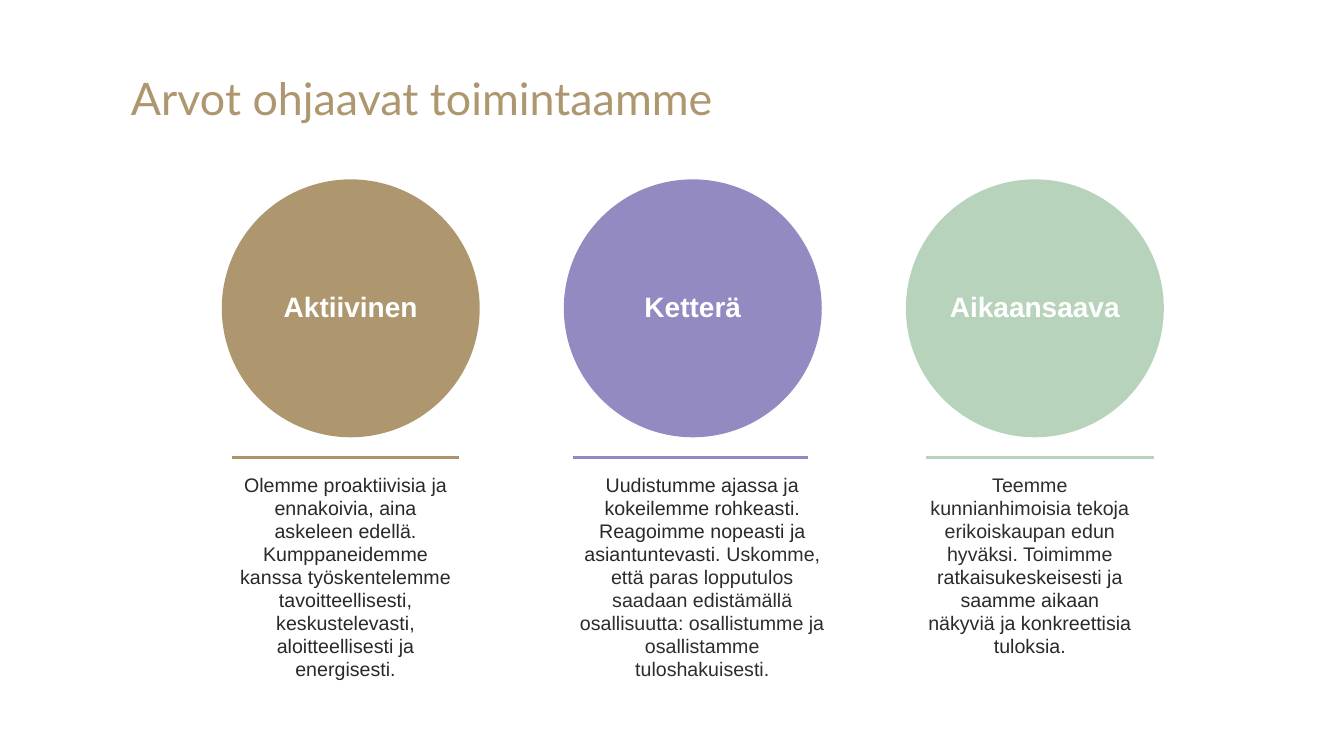
from dataclasses import dataclass

from lxml import etree
from pptx import Presentation
from pptx.dml.color import RGBColor
from pptx.enum.shapes import MSO_CONNECTOR, MSO_SHAPE
from pptx.enum.text import MSO_ANCHOR, MSO_AUTO_SIZE, PP_ALIGN
from pptx.oxml.ns import qn
from pptx.util import Cm, Pt

OVAL, LINE = MSO_SHAPE.OVAL, MSO_CONNECTOR.STRAIGHT
TOP, MIDDLE, BOTTOM = MSO_ANCHOR.TOP, MSO_ANCHOR.MIDDLE, MSO_ANCHOR.BOTTOM
LEFT, CENTER = PP_ALIGN.LEFT, PP_ALIGN.CENTER
NO_FIT = MSO_AUTO_SIZE.NONE


@dataclass
class Theme:
    gold: str = "AE976F"
    bronze: str = "AC946B"
    violet: str = "938AC2"
    mint: str = "B8D3BC"
    white: str = "FFFFFF"
    dark: str = "292929"
    soft: str = "2D2D2D"
    head: str = "Lato"
    body: str = "Arial"
    title: float = 32
    name: float = 20
    text: float = 14
    rule: float = 2.25


THEME = Theme()

TITLE = "Arvot ohjaavat toimintaamme"
# rule and box: left edge and width in cm; text: (wording, colour) runs
VALUES = [
    {"name": "Aktiivinen", "fill": THEME.gold, "line": THEME.bronze,
     "rule": (5.84, 5.72), "box": (5.51, 6.4),
     "text": [("Olemme proaktiivisia ja ennakoivia, aina askeleen edellä. "
               "Kumppaneidemme kanssa työskentelemme tavoitteellisesti, "
               "keskustelevasti, aloitteellisesti ja energisesti.", THEME.dark)]},
    {"name": "Ketterä", "fill": THEME.violet, "line": THEME.violet,
     "rule": (14.43, 5.92), "box": (14.07, 7.26),
     "text": [("Uudistumme ajassa ja kokeilemme rohkeasti. "
               "Reagoimme nopeasti ja asiantuntevasti. ", THEME.dark),
              ("Uskomme, että paras lopputulos saadaan edistämällä osallisuutta: "
               "osallistumme ja osallistamme tuloshakuisesti.", THEME.soft)]},
    {"name": "Aikaansaava", "fill": THEME.mint, "line": THEME.mint,
     "rule": (23.34, 5.74), "box": (22.83, 6.25),
     "text": [("Teemme kunnianhimoisia tekoja erikoiskaupan edun hyväksi. "
               "Toimimme ", THEME.soft),
              ("ratkaisukeskeisesti ja saamme aikaan näkyviä ja "
               "konkreettisia tuloksia.", THEME.dark)]},
]

START, PITCH = 5.59, 8.62
DISC_TOP, DISC = 4.52, 6.5
RULE_TOP, BOX_HIGH = 11.53, 5.99


def color(code):
    return RGBColor.from_string(code)


def apply(item, form):
    for key, value in form.items():
        setattr(item, key, value)


def write(shape, runs, font, anchor, align, pad, space):
    """Fill a shape with one paragraph of (wording, colour) runs."""
    frame = shape.text_frame
    side, edge = (Cm(size) for size in pad)
    apply(frame, {"word_wrap": True, "auto_size": NO_FIT, "vertical_anchor": anchor,
                  "margin_left": side, "margin_right": side,
                  "margin_top": edge, "margin_bottom": edge})
    para = frame.paragraphs[0]
    apply(para, {"alignment": align, "line_spacing": space})
    for words, tint in runs:
        run = para.add_run()
        run.text = words
        apply(run.font, font)
        run.font.color.rgb = color(tint)


def add_disc(shapes, value, left):
    disc = shapes.add_shape(OVAL, Cm(left), Cm(DISC_TOP), Cm(DISC), Cm(DISC))
    disc.shadow.inherit = False
    disc.fill.solid()
    disc.fill.fore_color.rgb = color(value["fill"])
    disc.line.fill.background()
    font = {"name": THEME.body, "size": Pt(THEME.name), "bold": True}
    write(disc, [(value["name"], THEME.white)], font, MIDDLE, CENTER, (0.13, 0.13), 0.9)


def add_text(shapes, value):
    left, width = value["box"]
    box = shapes.add_textbox(Cm(left), Cm(RULE_TOP), Cm(width), Cm(BOX_HIGH))
    font = {"name": THEME.body, "size": Pt(THEME.text)}
    write(box, value["text"], font, TOP, CENTER, (0.51, 0.41), 0.98)


def add_rule(shapes, value):
    left, width = value["rule"]
    rule = shapes.add_connector(LINE, Cm(left), Cm(RULE_TOP), Cm(left + width), Cm(RULE_TOP))
    rule.line.color.rgb = color(value["line"])
    rule.line.width = Pt(THEME.rule)
    etree.SubElement(rule._element.spPr, qn("a:effectLst"))


def main():
    deck = Presentation()
    apply(deck, {"slide_width": Cm(33.87), "slide_height": Cm(19.05)})
    slide = deck.slides.add_slide(deck.slide_layouts[5])
    shapes = slide.shapes

    title = shapes.title
    apply(title, {"left": Cm(3.05), "top": Cm(0.61), "width": Cm(27.94), "height": Cm(2.67)})
    font = {"name": THEME.head, "size": Pt(THEME.title)}
    write(title, [(TITLE, THEME.gold)], font, BOTTOM, LEFT, (0.25, 0.13), 0.9)

    for col, value in enumerate(VALUES):
        add_disc(shapes, value, START + col * PITCH)
        add_text(shapes, value)
        add_rule(shapes, value)

    deck.save("out.pptx")


if __name__ == "__main__":
    main()
